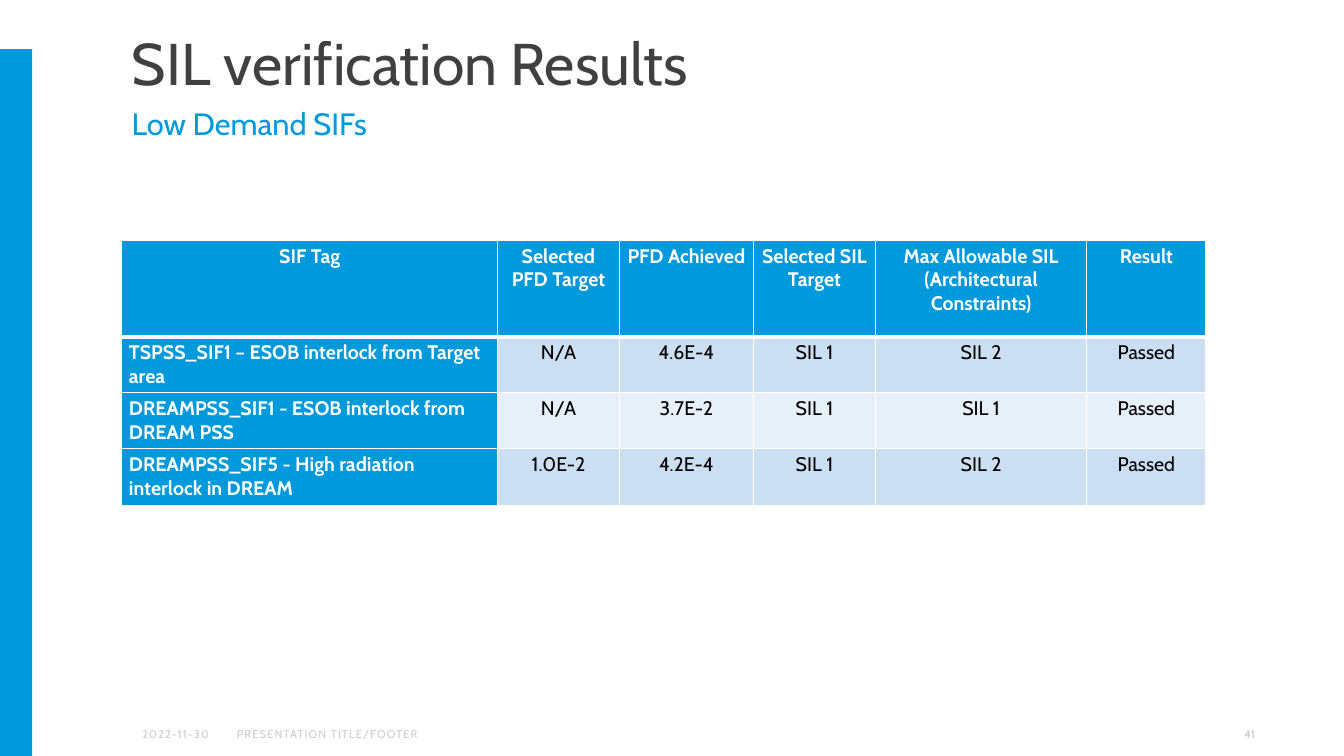
from dataclasses import dataclass

from lxml import etree
from pptx import Presentation
from pptx import util as u
from pptx.dml.color import RGBColor
from pptx.enum import shapes, text
from pptx.oxml.ns import qn


@dataclass(frozen=True)
class Theme:
    font: str = "Cabin"
    accent: str = "0099DC"
    heading: str = "404040"
    muted: str = "CCCCCC"
    white: str = "FFFFFF"
    ink: str = "000000"
    bands: tuple = ("CCDEF2", "E7EFF9")
    title_size: int = 42
    subtitle_size: int = 22
    table_size: int = 14
    footer_size: int = 8


LEFT, MIDDLE, RIGHT = text.PP_ALIGN.LEFT, text.PP_ALIGN.CENTER, text.PP_ALIGN.RIGHT
TOP, CENTER = text.MSO_ANCHOR.TOP, text.MSO_ANCHOR.MIDDLE

HEADERS = ["SIF Tag", "Selected PFD Target", "PFD Achieved", "Selected SIL Target",
           "Max Allowable SIL (Architectural Constraints)", "Result"]
SIFS = [
    ["TSPSS_SIF1 – ESOB interlock from Target area", "N/A", "4.6E-4", "SIL 1", "SIL 2", "Passed"],
    ["DREAMPSS_SIF1 - ESOB interlock from DREAM PSS", "N/A", "3.7E-2", "SIL 1", "SIL 1", "Passed"],
    ["DREAMPSS_SIF5 - High radiation interlock in DREAM", "1.0E-2", "4.2E-4", "SIL 1", "SIL 2", "Passed"],
]
COLUMN_WIDTHS = [9.47, 3.07, 3.38, 3.07, 5.33, 3.0]
ROW_HEIGHTS = [2.44, 1.35, 1.35, 1.45]


class SlideBuilder:
    def __init__(self, deck, theme):
        self.theme = theme
        self.page = deck.slides.add_slide(deck.slide_layouts[5])

    def set_text(self, frame, words, size, color, bold=False, align=LEFT, spacing=None):
        frame.word_wrap = True
        para = frame.paragraphs[0]
        para.text = words
        para.alignment = align
        span = para.runs[0]
        span.font.name = self.theme.font
        span.font.size = u.Pt(size)
        span.font.bold = bold
        span.font.color.rgb = RGBColor.from_string(color)
        if spacing:
            span._r.get_or_add_rPr().set("spc", str(round(spacing * 100)))
        return para

    def frame(self, box, anchor, top=0.13, bottom=0.13):
        frame = box.text_frame
        frame.auto_size = text.MSO_AUTO_SIZE.NONE
        frame.vertical_anchor = anchor
        frame.margin_left = frame.margin_right = u.Cm(0.25)
        frame.margin_top, frame.margin_bottom = u.Cm(top), u.Cm(bottom)
        return frame

    def bar(self, left, top, width, height):
        bar = self.page.shapes.add_shape(
            shapes.MSO_SHAPE.RECTANGLE, *map(u.Cm, (left, top, width, height)))
        bar.shadow.inherit = False
        bar.fill.solid()
        bar.fill.fore_color.rgb = RGBColor.from_string(self.theme.accent)
        bar.line.fill.background()

    def title(self, words, left, top, width, height):
        box = self.page.shapes.title
        box.left, box.top, box.width, box.height = map(u.Cm, (left, top, width, height))
        para = self.set_text(self.frame(box, TOP, bottom=0.05), words,
                             self.theme.title_size, self.theme.heading)
        para.line_spacing = 0.9

    def subtitle(self, words, left, top, width, height):
        box = self.page.shapes.add_textbox(*map(u.Cm, (left, top, width, height)))
        self.set_text(self.frame(box, TOP, top=0.05), words,
                      self.theme.subtitle_size, self.theme.accent)

    def footer(self, words, left, width, **style):
        box = self.page.shapes.add_textbox(*map(u.Cm, (left, 17.98, width, 1.02)))
        self.set_text(self.frame(box, CENTER), words,
                      self.theme.footer_size, self.theme.muted, **style)

    def borders(self, cell, top, bottom):
        properties = cell._tc.get_or_add_tcPr()
        edges = {"lnL": 1, "lnR": 1, "lnT": top, "lnB": bottom}
        for index, (edge, points) in enumerate(edges.items()):
            line = etree.Element(qn("a:" + edge), w=str(u.Pt(points)))
            fill = etree.SubElement(line, qn("a:solidFill"))
            etree.SubElement(fill, qn("a:srgbClr"), val=self.theme.white)
            properties.insert(index, line)

    def cell(self, cell, words, row, column):
        theme = self.theme
        strong = row == 0 or column == 0
        cell.margin_left = cell.margin_right = u.Cm(0.18)
        cell.margin_top = cell.margin_bottom = u.Cm(0.1)
        cell.vertical_anchor = TOP
        cell.fill.solid()
        cell.fill.fore_color.rgb = RGBColor.from_string(
            theme.accent if strong else theme.bands[(row - 1) % 2])
        para = self.set_text(cell.text_frame, words, theme.table_size,
                             theme.white if strong else theme.ink, bold=strong,
                             align=LEFT if row and column == 0 else MIDDLE)
        para.space_after = u.Pt(6)
        self.borders(cell, top=3 if row == 1 else 1, bottom=3 if row == 0 else 1)

    def table(self, rows, left, top, widths, heights):
        size = map(u.Cm, (left, top, sum(widths), sum(heights)))
        table = self.page.shapes.add_table(len(rows), len(widths), *size).table
        for column, width in zip(table.columns, widths):
            column.width = u.Cm(width)
        for row, height in zip(table.rows, heights):
            row.height = u.Cm(height)
        for row, values in enumerate(rows):
            for column, words in enumerate(values):
                self.cell(table.cell(row, column), words, row, column)


def main():
    deck = Presentation()
    deck.slide_width, deck.slide_height = u.Cm(33.87), u.Cm(19.05)
    slide = SlideBuilder(deck, Theme())
    slide.bar(0, 1.24, 0.81, 17.81)
    slide.title("SIL verification Results", 3.07, 0.74, 26.01, 1.83)
    slide.subtitle("Low Demand SIFs", 3.07, 2.59, 26.01, 1.4)
    slide.table([HEADERS, *SIFS], 3.07, 6.05, COLUMN_WIDTHS, ROW_HEIGHTS)
    slide.footer("2022-11-30", 3.33, 2.31, spacing=0.8)
    slide.footer("PRESENTATION TITLE/FOOTER", 5.72, 11.99, spacing=0.8)
    slide.footer("41", 24.26, 7.62, bold=True, align=RIGHT)
    deck.save("out.pptx")


if __name__ == "__main__":
    main()
